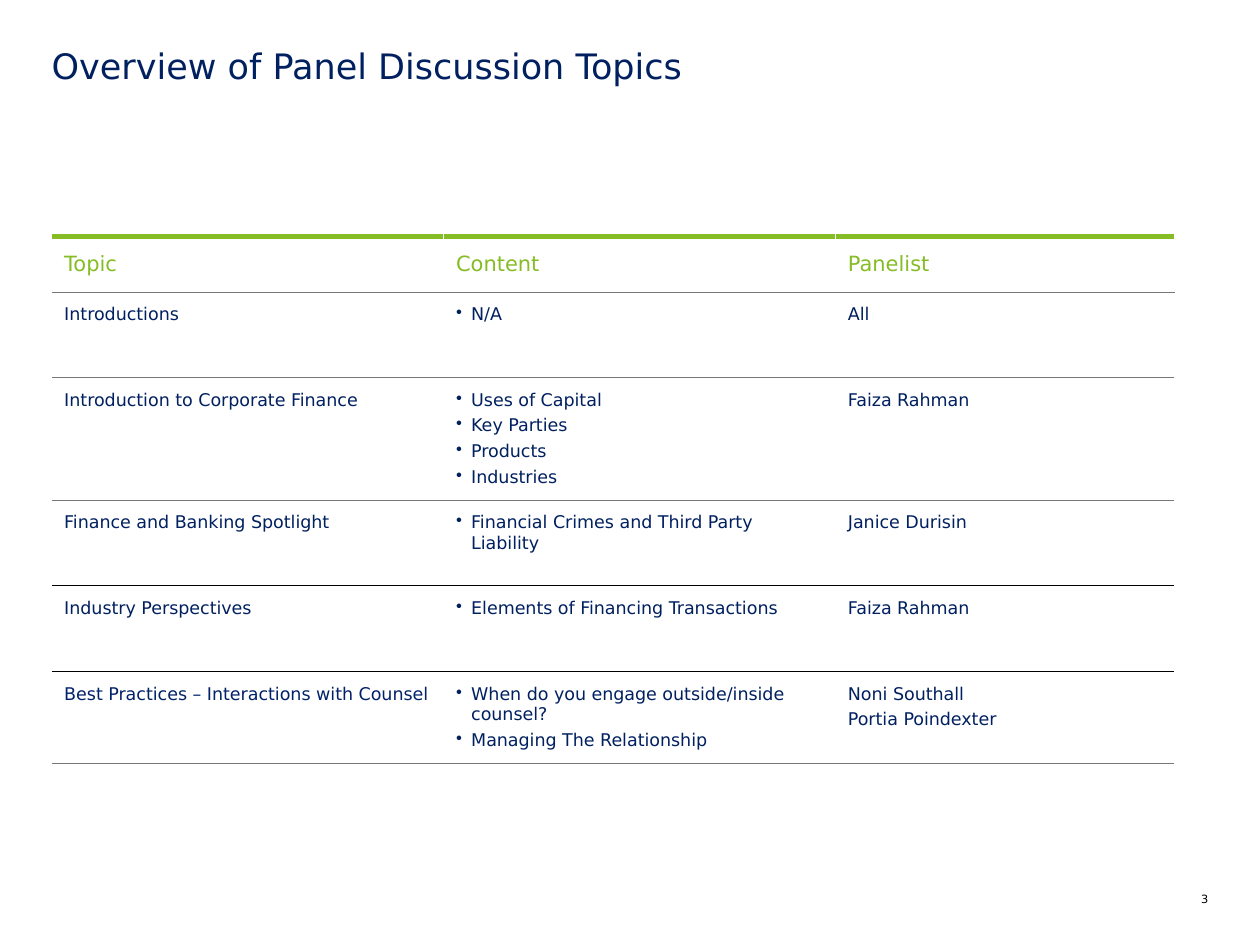
import dataclasses

import lxml.etree
import pptx
import pptx.dml.color
import pptx.enum.text
import pptx.oxml.ns
import pptx.util

Inches = pptx.util.Inches
ANCHOR = pptx.enum.text.MSO_ANCHOR
ALIGN = pptx.enum.text.PP_ALIGN


@dataclasses.dataclass(frozen=True)
class Theme:
    font: str = "DejaVu Sans"
    navy: str = "002060"
    blue: str = "012169"
    green: str = "86BC25"
    gray: str = "75787B"
    black: str = "000000"
    white: str = "FFFFFF"
    title_size: float = 20
    header_size: float = 12
    body_size: float = 10
    number_size: float = 6.5


THEME = Theme()
SLIDE_WIDTH, SLIDE_HEIGHT = 10, 7.5
MARGIN = 0.41
CELL_INSET = 0.1
BULLET_INDENT = 0.12
COLUMN_WIDTHS = (3.11, 3.11, 2.69)
HEADER_HEIGHT, ROW_HEIGHT = 0.44, 0.68
HEADERS = ("Topic", "Content", "Panelist")
TOPICS = (
    ("Introductions", ["N/A"], ["All"]),
    ("Introduction to Corporate Finance",
     ["Uses of Capital", "Key Parties", "Products", "Industries"],
     ["Faiza Rahman"]),
    ("Finance and Banking Spotlight",
     ["Financial Crimes and Third Party Liability"], ["Janice Durisin"]),
    ("Industry Perspectives",
     ["Elements of Financing Transactions"], ["Faiza Rahman"]),
    ("Best Practices – Interactions with Counsel",
     ["When do you engage outside/inside counsel?", "Managing The Relationship"],
     ["Noni Southall", "Portia Poindexter"]),
)
RULE_COLORS = (THEME.gray, THEME.gray, THEME.gray, THEME.black, THEME.black, THEME.gray)


def add_element(parent, tag, **attributes):
    element = lxml.etree.SubElement(parent, pptx.oxml.ns.qn(tag))
    for name, value in attributes.items():
        element.set(name, str(value))
    return element


def add_bullet(paragraph):
    paragraph.level = 1
    properties = paragraph._p.get_or_add_pPr()
    properties.set("marL", str(Inches(BULLET_INDENT)))
    properties.set("indent", str(-Inches(BULLET_INDENT)))
    add_element(properties, "a:buChar", char="•")


def write_text(frame, lines, size, color, inset=0, gap=0, align=ALIGN.LEFT,
               anchor=ANCHOR.TOP, bulleted=False):
    frame.word_wrap = True
    frame.vertical_anchor = anchor
    frame.margin_left = frame.margin_right = Inches(inset)
    frame.margin_top = frame.margin_bottom = Inches(inset)
    for index, line in enumerate(lines):
        paragraph = frame.add_paragraph() if index else frame.paragraphs[0]
        paragraph.alignment = align
        paragraph.space_before = pptx.util.Pt(gap if index else 0)
        if bulleted:
            add_bullet(paragraph)
        run = paragraph.add_run()
        run.text = line
        run.font.name = THEME.font
        run.font.size = pptx.util.Pt(size)
        run.font.bold = False
        run.font.color.rgb = pptx.dml.color.RGBColor.from_string(color)


def set_borders(cell, **borders):
    properties = cell._tc.get_or_add_tcPr()
    for side in ("L", "R", "T", "B"):
        color, width = borders.get(side, (None, 0))
        line = add_element(properties, f"a:ln{side}", w=pptx.util.Pt(width))
        if color:
            add_element(add_element(line, "a:solidFill"), "a:srgbClr", val=color)
        else:
            add_element(line, "a:noFill")


def write_cell(cell, lines, size, color, borders, anchor=ANCHOR.TOP, bulleted=False):
    set_borders(cell, **borders)
    cell.fill.background()
    write_text(cell.text_frame, lines, size, color, gap=3, bulleted=bulleted)
    cell.vertical_anchor = anchor
    cell.margin_left = cell.margin_right = Inches(CELL_INSET)
    cell.margin_top = cell.margin_bottom = Inches(CELL_INSET)


def add_title(slide, text):
    title = slide.shapes.title
    title.left, title.top = Inches(MARGIN), Inches(0.35)
    title.width, title.height = Inches(SLIDE_WIDTH - 2 * MARGIN), Inches(0.37)
    write_text(title.text_frame, [text], THEME.title_size, THEME.navy)


def add_topic_table(slide):
    height = HEADER_HEIGHT + len(TOPICS) * ROW_HEIGHT
    table = slide.shapes.add_table(
        len(TOPICS) + 1, len(HEADERS), Inches(MARGIN), Inches(SLIDE_HEIGHT / 4),
        Inches(sum(COLUMN_WIDTHS)), Inches(height)).table
    table.horz_banding = False
    for column, width in zip(table.columns, COLUMN_WIDTHS):
        column.width = Inches(width)
    for index, row in enumerate(table.rows):
        row.height = Inches(ROW_HEIGHT if index else HEADER_HEIGHT)

    divider = (THEME.white, 0.5)
    for index, header in enumerate(HEADERS):
        borders = {"T": (THEME.green, 3), "R": divider, "B": (RULE_COLORS[0], 0.25)}
        if index:
            borders["L"] = divider
        write_cell(table.cell(0, index), [header], THEME.header_size, THEME.green,
                   borders, anchor=ANCHOR.MIDDLE)

    for row, (topic, content, panelists) in enumerate(TOPICS, start=1):
        borders = {"T": (RULE_COLORS[row - 1], 0.25), "B": (RULE_COLORS[row], 0.25)}
        topic_color = THEME.blue if row == len(TOPICS) else THEME.navy
        write_cell(table.cell(row, 0), [topic], THEME.body_size, topic_color, borders)
        write_cell(table.cell(row, 1), content, THEME.body_size, THEME.navy, borders,
                   bulleted=True)
        write_cell(table.cell(row, 2), panelists, THEME.body_size, THEME.navy, borders)


def add_page_number(slide, number):
    width = 0.25
    box = slide.shapes.add_textbox(
        Inches(SLIDE_WIDTH - MARGIN - width), Inches(7.08), Inches(width), Inches(0.11))
    write_text(box.text_frame, [number], THEME.number_size, THEME.black, align=ALIGN.RIGHT)


def main():
    presentation = pptx.Presentation()
    presentation.slide_width = Inches(SLIDE_WIDTH)
    presentation.slide_height = Inches(SLIDE_HEIGHT)
    slide = presentation.slides.add_slide(presentation.slide_layouts.get_by_name("Title Only"))
    add_title(slide, "Overview of Panel Discussion Topics")
    add_topic_table(slide)
    add_page_number(slide, "3")
    presentation.save("out.pptx")


if __name__ == "__main__":
    main()
